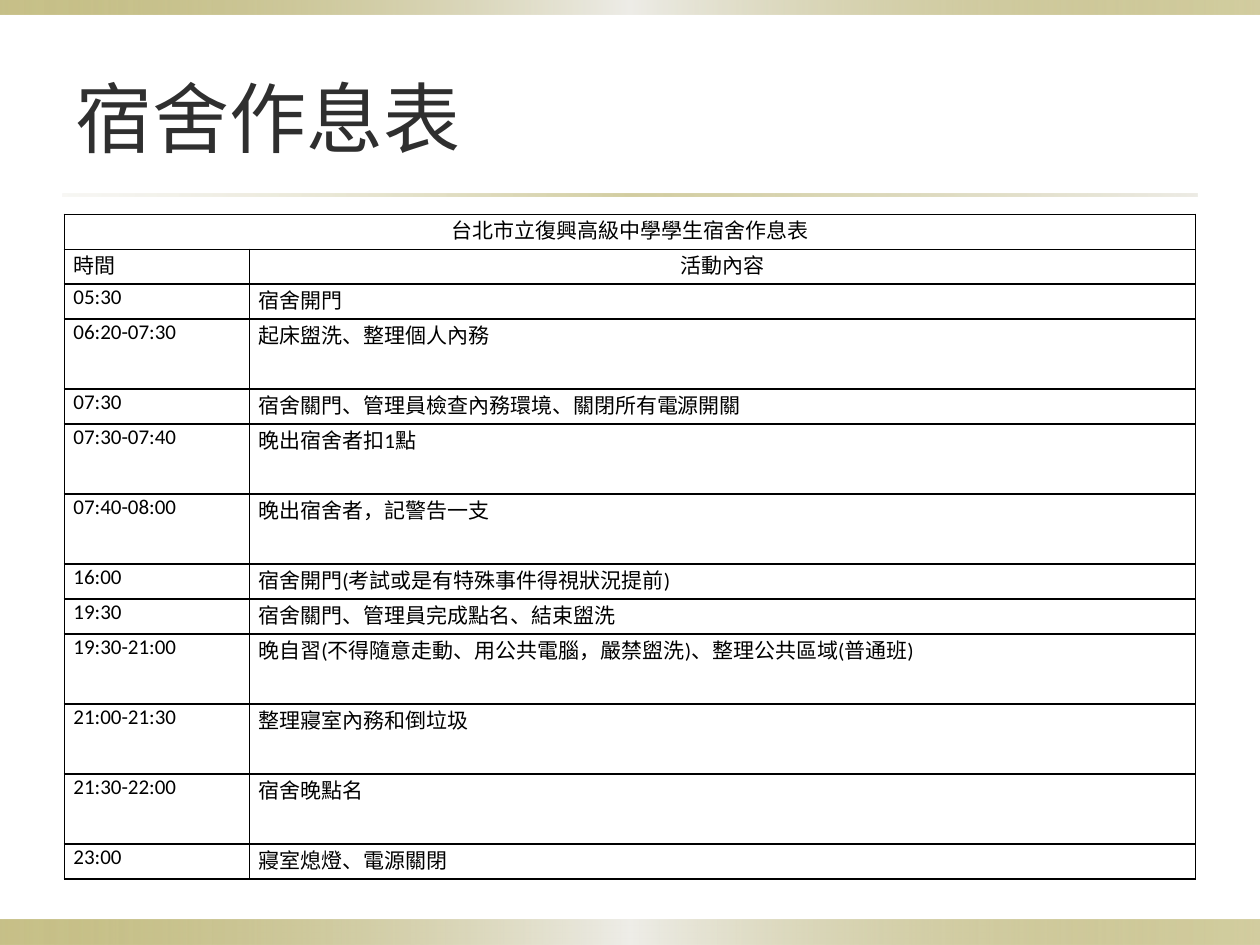
import lxml.etree
import pptx
import pptx.dml.color
import pptx.enum.shapes
import pptx.enum.text
import pptx.oxml.ns
import pptx.util

Cm, Pt = pptx.util.Cm, pptx.util.Pt
ALIGN = pptx.enum.text.PP_ALIGN
qn = pptx.oxml.ns.qn


def color(hex_string):
    return pptx.dml.color.RGBColor.from_string(hex_string)


def write(frame, text, alignment, font_format):
    paragraph = frame.paragraphs[0]
    paragraph.alignment = alignment
    run = paragraph.add_run()
    run.text = text
    run.font.color.rgb = color(font_format["color"])
    for name in ("name", "size"):
        setattr(run.font, name, font_format[name])
    east_asian = lxml.etree.SubElement(run.font._element, qn("a:ea"))
    east_asian.set("typeface", "Noto Sans CJK SC")


presentation = pptx.Presentation()
presentation.slide_width, presentation.slide_height = Cm(25.4), Cm(19.05)
slide = presentation.slides.add_slide(presentation.slide_layouts[5])

# Gradient bands at the bottom and top, and the rule under the title
band_stops = [(0, "918415", 50), (50, "EEEDE8", 100), (100, "918415", 40)]
rule_stops = [(0, "DCD9CC", 20), (50, "918415", 40), (100, "DCD9CC", 50)]
bands = [
    (0, 18.54, 25.4, 0.51, band_stops),
    (0, 0, 25.4, 0.3, band_stops),
    (1.27, 3.91, 22.86, 0.05, rule_stops),
]
for left, top, width, height, stops in bands:
    shape = slide.shapes.add_shape(
        pptx.enum.shapes.MSO_SHAPE.RECTANGLE, Cm(left), Cm(top), Cm(width), Cm(height))
    shape.shadow.inherit = False
    shape.line.fill.background()
    shape.fill.gradient()
    shape.fill.gradient_angle = 0
    stop_list = shape._element.spPr.find(".//" + qn("a:gsLst"))
    for old_stop in list(stop_list):
        stop_list.remove(old_stop)
    for position, hex_string, opacity in stops:
        stop = lxml.etree.SubElement(stop_list, qn("a:gs"), pos=str(position * 1000))
        stop_color = lxml.etree.SubElement(stop, qn("a:srgbClr"), val=hex_string)
        lxml.etree.SubElement(stop_color, qn("a:alpha"), val=str(opacity * 1000))

# Title
title = slide.shapes.title
title_place = {"left": Cm(1.27), "top": Cm(0.76), "width": Cm(22.86), "height": Cm(3.18)}
for name, value in title_place.items():
    setattr(title, name, value)
title.text_frame.vertical_anchor = pptx.enum.text.MSO_ANCHOR.MIDDLE
write(title.text_frame, "宿舍作息表", ALIGN.JUSTIFY,
      {"name": "Noto Sans CJK SC", "size": Pt(44), "color": "2F2F2F"})

# Timetable: time, activity, height in row units
schedule = [
    ("台北市立復興高級中學學生宿舍作息表", "", 1),
    ("時間", "活動內容", 1),
    ("05:30", "宿舍開門", 1),
    ("06:20-07:30", "起床盥洗、整理個人內務", 2),
    ("07:30", "宿舍關門、管理員檢查內務環境、關閉所有電源開關", 1),
    ("07:30-07:40", "晚出宿舍者扣1點", 2),
    ("07:40-08:00", "晚出宿舍者，記警告一支", 2),
    ("16:00", "宿舍開門(考試或是有特殊事件得視狀況提前)", 1),
    ("19:30", "宿舍關門、管理員完成點名、結束盥洗", 1),
    ("19:30-21:00", "晚自習(不得隨意走動、用公共電腦，嚴禁盥洗)、整理公共區域(普通班)", 2),
    ("21:00-21:30", "整理寢室內務和倒垃圾", 2),
    ("21:30-22:00", "宿舍晚點名", 2),
    ("23:00", "寢室熄燈、電源關閉", 1),
]
table_height = 13.41
row_unit = table_height / sum(units for _, _, units in schedule)
table = slide.shapes.add_table(
    len(schedule), 2, Cm(1.3), Cm(4.32), Cm(22.8), Cm(table_height)).table
table.first_row = table.horz_banding = False
for column, width in zip(table.columns, (3.73, 19.07)):
    column.width = Cm(width)
table.cell(0, 0).merge(table.cell(0, 1))

cell_format = {"margin_left": Cm(0.18), "margin_right": Cm(0.18),
               "margin_top": 0, "margin_bottom": 0}
cell_font = {"name": "Calibri", "size": Pt(12), "color": "000000"}
centered_cells = {(0, 0), (1, 1)}
for row_index, (time, activity, units) in enumerate(schedule):
    table.rows[row_index].height = Cm(units * row_unit)
    for column_index, text in enumerate((time, activity)):
        cell = table.cell(row_index, column_index)
        for name, value in cell_format.items():
            setattr(cell, name, value)
        # Borders come before the fill in the cell properties
        properties = cell._tc.get_or_add_tcPr()
        for side in ("a:lnL", "a:lnR", "a:lnT", "a:lnB"):
            border = lxml.etree.SubElement(properties, qn(side), w=str(Pt(1)))
            border_fill = lxml.etree.SubElement(border, qn("a:solidFill"))
            lxml.etree.SubElement(border_fill, qn("a:srgbClr"), val="000000")
        cell.fill.background()
        if text:
            centered = (row_index, column_index) in centered_cells
            write(cell.text_frame, text, ALIGN.CENTER if centered else ALIGN.LEFT, cell_font)
        else:
            cell.text_frame.paragraphs[0].font.size = cell_font["size"]

presentation.save("out.pptx")
